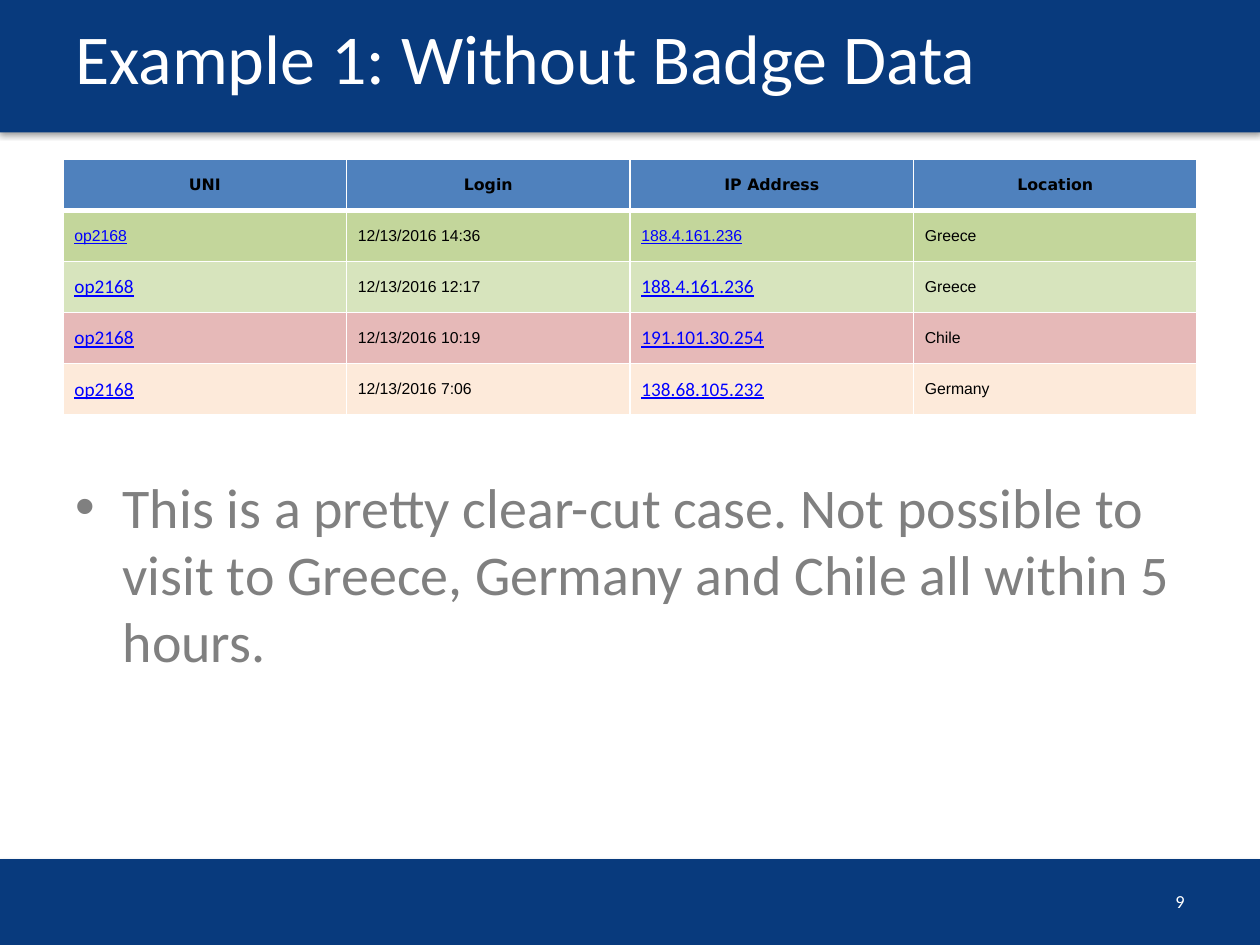
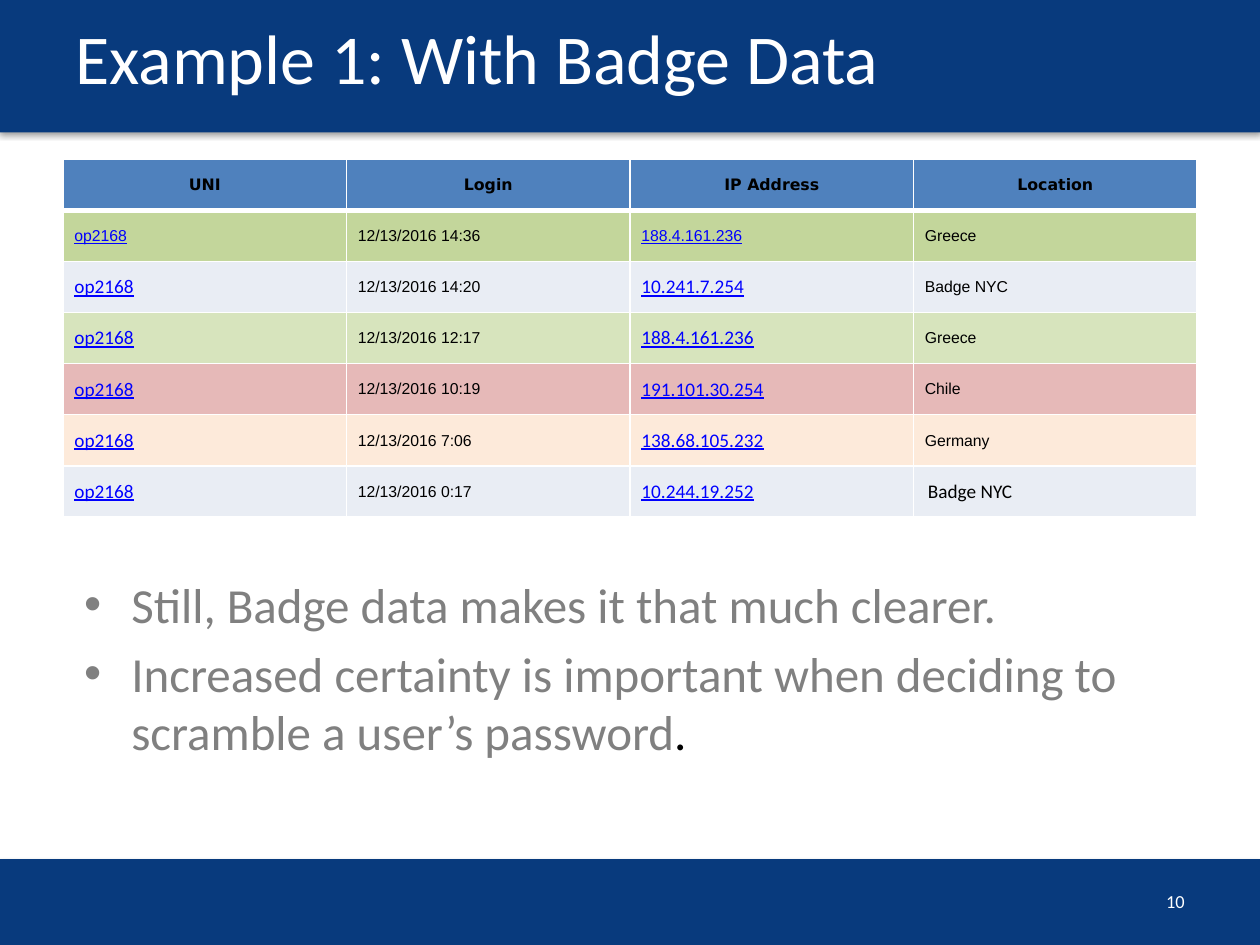
from lxml import etree
from pptx import Presentation
from pptx.dml.color import RGBColor
from pptx.enum.shapes import MSO_SHAPE
from pptx.enum.text import MSO_ANCHOR, PP_ALIGN
from pptx.oxml.ns import qn
from pptx.util import Pt

RECT = MSO_SHAPE.RECTANGLE
TOP, MID = MSO_ANCHOR.TOP, MSO_ANCHOR.MIDDLE
LEFT, MIDDLE, RIGHT = PP_ALIGN.LEFT, PP_ALIGN.CENTER, PP_ALIGN.RIGHT

WIDE, HIGH = 720, 540
NAVY, WHITE, BLACK, GREY = "083A7D", "FFFFFF", "000000", "808080"
BLUE, LINK, PALE = "4F81BD", "0000FF", "E9EDF4"
GREEN, LIME, ROSE, PEACH = "C3D69B", "D7E4BD", "E6B9B8", "FDEADA"

TITLE = dict(name="Calibri", size=Pt(40), color=WHITE)
NUMBER = dict(name="Calibri", size=Pt(10.5), color=WHITE)
HEAD = dict(name="DejaVu Sans", size=Pt(9), color=BLACK, bold=True)
PLAIN = dict(name="Arial", size=Pt(9), color=BLACK)
FIRST = dict(PLAIN, color=LINK, underline=True)
LINKED = dict(FIRST, name="Calibri", size=Pt(11))
LARGE = dict(PLAIN, name="Calibri", size=Pt(11))

NAMES = ("UNI", "Login", "IP Address", "Location")
USER = "op2168"
LINKS = (0, 2)
ROW = 29.2
INSET = 6.5

# Each login: time, address, place, row colour
LATE = ("12/13/2016 14:36", "188.4.161.236", "Greece", GREEN)
DOOR = ("12/13/2016 14:20", "10.241.7.254", "Badge NYC", PALE)
NOON = ("12/13/2016 12:17", "188.4.161.236", "Greece", LIME)
MORN = ("12/13/2016 10:19", "191.101.30.254", "Chile", ROSE)
DAWN = ("12/13/2016 7:06", "138.68.105.232", "Germany", PEACH)
NIGHT = ("12/13/2016 0:17", "10.244.19.252", "Badge NYC", PALE)


def rgb(code):
    return RGBColor.from_string(code)


def child(parent, tag, **attrs):
    return etree.SubElement(parent, qn(tag), {k: str(v) for k, v in attrs.items()})


def paint(item, code):
    item.fill.solid()
    item.fill.fore_color.rgb = rgb(code)


def write(para, text, style):
    run = para.add_run()
    run.text = text
    for key, value in style.items():
        if key == "color":
            run.font.color.rgb = rgb(value)
        else:
            setattr(run.font, key, value)


def text_box(slide, box, anchor):
    frame = slide.shapes.add_textbox(*map(Pt, box)).text_frame
    frame.word_wrap = True
    frame.vertical_anchor = anchor
    return frame


def band(slide, box):
    shape = slide.shapes.add_shape(RECT, *map(Pt, box))
    paint(shape, NAVY)
    shape.line.fill.background()
    # Soft shadow below the band
    shape.shadow.inherit = False
    effects = shape._element.spPr.find(qn("a:effectLst"))
    shade = child(effects, "a:outerShdw", blurRad=Pt(3.1), dist=Pt(1.8),
                  dir=5400000, algn="t", rotWithShape=0)
    child(child(shade, "a:srgbClr", val=BLACK), "a:alpha", val=35000)


def label(slide, box, text, style, align=LEFT):
    para = text_box(slide, box, MID).paragraphs[0]
    para.alignment = align
    write(para, text, style)


def frame_page(slide, title, number):
    band(slide, (0, 0, WIDE, 75.6))
    band(slide, (0, 491, WIDE, HIGH - 491))
    label(slide, (36, 0.7, 648, 63.4), title, TITLE)
    label(slide, (516, 500.4, 168, 28.8), str(number), NUMBER, RIGHT)


def borders(cell, top, bottom):
    props = cell._tc.get_or_add_tcPr()
    widths = {"a:lnL": 1, "a:lnR": 1, "a:lnT": top, "a:lnB": bottom}
    for tag, width in widths.items():
        line = child(props, tag, w=Pt(width))
        child(child(line, "a:solidFill"), "a:srgbClr", val=WHITE)


def fill_cell(cell, text, style, code, rule, left=INSET, align=LEFT):
    margins = dict(margin_left=Pt(left), margin_top=Pt(0.6),
                   margin_right=Pt(0.6), margin_bottom=Pt(0.3))
    for key, value in margins.items():
        setattr(cell, key, value)
    cell.vertical_anchor = MID
    borders(cell, *rule)
    paint(cell, code)
    para = cell.text_frame.paragraphs[0]
    para.alignment = align
    write(para, text, style)


def login_table(slide, box, logins):
    left, top, width = box
    count = len(logins) + 1
    table = slide.shapes.add_table(
        count, len(NAMES), Pt(left), Pt(top), Pt(width), Pt(ROW * count)).table
    for row in table.rows:
        row.height = Pt(ROW)
    for col, name in enumerate(NAMES):
        table.columns[col].width = Pt(width / len(NAMES))
        fill_cell(table.cell(0, col), name, HEAD, BLUE, (1, 3), 0.6, MIDDLE)
    for row, (time, address, place, code) in enumerate(logins, 1):
        rule = (3 if row == 1 else 1, 1)
        for col, text in enumerate((USER, time, address, place)):
            style, inset = PLAIN, INSET
            if col in LINKS:
                style = FIRST if row == 1 else LINKED
            elif col == 3 and logins[row - 1] is NIGHT:
                style, inset = LARGE, 8.2
            fill_cell(table.cell(row, col), text, style, code, rule, inset)


def bullets(slide, box, size, points):
    frame = text_box(slide, box, TOP)
    for index, parts in enumerate(points):
        para = frame.add_paragraph() if index else frame.paragraphs[0]
        if index:
            para.space_before = Pt(size * 0.2)
        props = para._p.get_or_add_pPr()
        props.set("marL", str(Pt(27)))
        props.set("indent", str(Pt(-27)))
        child(props, "a:buFont", typeface="Arial")
        child(props, "a:buChar", char="•")
        for text, code in parts:
            write(para, text, dict(name="Calibri", size=Pt(size), color=code))


def case_page(deck, number, title, logins, box, size, points):
    slide = deck.slides.add_slide(deck.slide_layouts[6])
    frame_page(slide, title, number)
    login_table(slide, (36, 91, 648), logins)
    bullets(slide, box, size, points)


def main():
    deck = Presentation()
    deck.slide_width, deck.slide_height = Pt(WIDE), Pt(HIGH)
    case_page(
        deck, 9, "Example 1: Without Badge Data", (LATE, NOON, MORN, DAWN),
        (36, 266.4, 648, 123.8), 32,
        [[("This is a pretty clear-cut case. Not possible to visit to "
           "Greece, Germany and Chile all within 5 hours.", GREY)]])
    case_page(
        deck, 10, "Example 1: With Badge Data",
        (LATE, DOOR, NOON, MORN, DAWN, NIGHT),
        (41, 324.7, 643, 116), 28,
        [[("Still, Badge data makes it that much clearer.", GREY)],
         [("Increased certainty is important when deciding to scramble "
           "a user’s password", GREY), (".", BLACK)]])
    deck.save("out.pptx")


if __name__ == "__main__":
    main()
